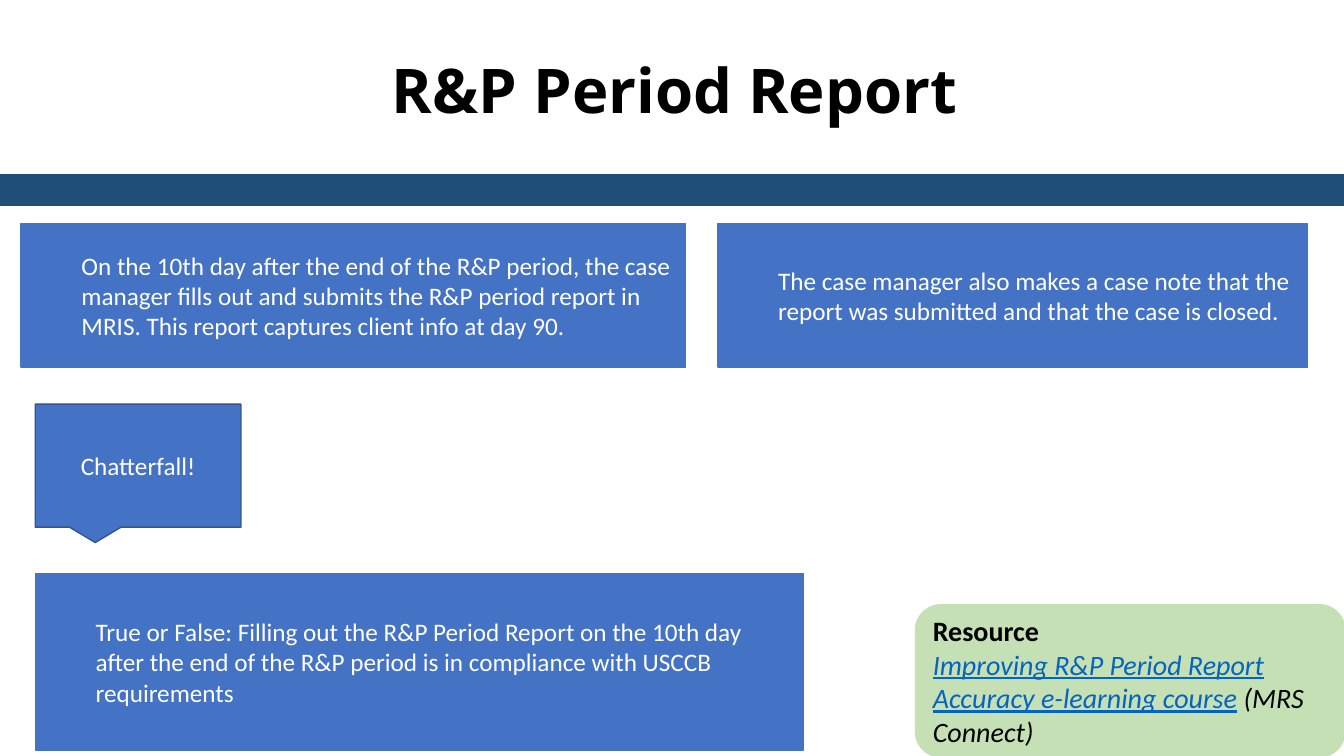
from dataclasses import dataclass

from pptx import Presentation
from pptx import util as u
from pptx.dml.color import RGBColor
from pptx.enum import shapes, text
from pptx.util import Inches


@dataclass(frozen=True)
class Theme:
    body_font: str = "Calibri"
    title_font: str = "Open Sans"
    title_size: int = 44
    resource_size: int = 20
    body_size: int = 18
    black: str = "000000"
    white: str = "FFFFFF"
    band: str = "1F4E79"
    panel: str = "4472C4"
    callout_line: str = "325491"
    resource: str = "C5E0B4"
    link: str = "0563C1"


THEME = Theme()
SHAPE = shapes.MSO_SHAPE


def add_run(paragraph, content, *, size=THEME.body_size, color=THEME.white,
            font=THEME.body_font, bold=False, italic=False, underline=False):
    """Add formatted text to a paragraph."""
    run = paragraph.add_run()
    run.text = content
    run.font.name = font
    run.font.size = u.Pt(size)
    run.font.bold = bold
    run.font.italic = italic
    run.font.underline = underline
    run.font.color.rgb = RGBColor.from_string(color)


def add_block(slide, kind, left, top, width, height, fill, line=None):
    """Add a filled shape and return its first paragraph, left aligned."""
    shape = slide.shapes.add_shape(
        kind, Inches(left), Inches(top), Inches(width), Inches(height))
    shape.shadow.inherit = False
    shape.fill.solid()
    shape.fill.fore_color.rgb = RGBColor.from_string(fill)
    shape.line.color.rgb = RGBColor.from_string(line or fill)
    shape.line.width = u.Pt(1)
    frame = shape.text_frame
    frame.word_wrap = True
    frame.vertical_anchor = text.MSO_ANCHOR.MIDDLE
    paragraph = frame.paragraphs[0]
    paragraph.alignment = text.PP_ALIGN.LEFT
    return shape, paragraph


def add_title(slide, content):
    box = slide.shapes.add_textbox(
        Inches(0.58), Inches(0.47), Inches(12.23), Inches(0.84))
    box.text_frame.word_wrap = True
    box.text_frame.auto_size = text.MSO_AUTO_SIZE.SHAPE_TO_FIT_TEXT
    paragraph = box.text_frame.paragraphs[0]
    paragraph.alignment = text.PP_ALIGN.CENTER
    add_run(paragraph, content, size=THEME.title_size, color=THEME.black,
            font=THEME.title_font, bold=True)


def add_panel(slide, left, top, width, height, content):
    _, paragraph = add_block(
        slide, SHAPE.RECTANGLE, left, top, width, height, THEME.panel)
    paragraph.level = 1
    properties = paragraph._p.get_or_add_pPr()
    properties.set("marL", str(Inches(0.5)))
    properties.set("indent", "0")
    add_run(paragraph, content)


def add_callout(slide, content):
    _, paragraph = add_block(
        slide, SHAPE.RECTANGULAR_CALLOUT, 0.35, 4.01, 2.04, 1.22,
        THEME.panel, THEME.callout_line)
    paragraph.alignment = text.PP_ALIGN.CENTER
    add_run(paragraph, content)


def add_resource(slide, heading, course, site):
    shape, paragraph = add_block(
        slide, SHAPE.FLOWCHART_ALTERNATE_PROCESS, 9.08, 6, 4.26, 1.51,
        THEME.resource)
    size = THEME.resource_size
    add_run(paragraph, heading, size=size, color=THEME.black, bold=True)
    detail = shape.text_frame.add_paragraph()
    detail.alignment = text.PP_ALIGN.LEFT
    add_run(detail, course, size=size, color=THEME.link, italic=True,
            underline=True)
    add_run(detail, site, size=size, color=THEME.black, italic=True)


def main():
    presentation = Presentation()
    presentation.slide_width = Inches(13.33)
    presentation.slide_height = Inches(7.5)
    slide = presentation.slides.add_slide(presentation.slide_layouts[6])

    # Heading
    add_title(slide, "R&P Period Report")
    add_block(slide, SHAPE.RECTANGLE, 0, 1.73, 13.33, 0.31, THEME.band)

    # Resource card
    add_resource(slide, "Resource",
                 "Improving R&P Period Report Accuracy e-learning course",
                 " (MRS Connect)")

    # Reporting steps
    add_panel(slide, 0.21, 2.22, 6.59, 1.42,
              "On the 10th day after the end of the R&P period, the case "
              "manager fills out and submits the R&P period report in MRIS. "
              "This report captures client info at day 90.")
    add_panel(slide, 7.12, 2.22, 5.85, 1.42,
              "The case manager also makes a case note that the report was "
              "submitted and that the case is closed.")

    # Quiz
    add_callout(slide, "Chatterfall!")
    add_panel(slide, 0.35, 5.69, 7.62, 1.75,
              "True or False: Filling out the R&P Period Report on the 10th "
              "day after the end of the R&P period is in compliance with "
              "USCCB requirements")

    presentation.save("out.pptx")


if __name__ == "__main__":
    main()
